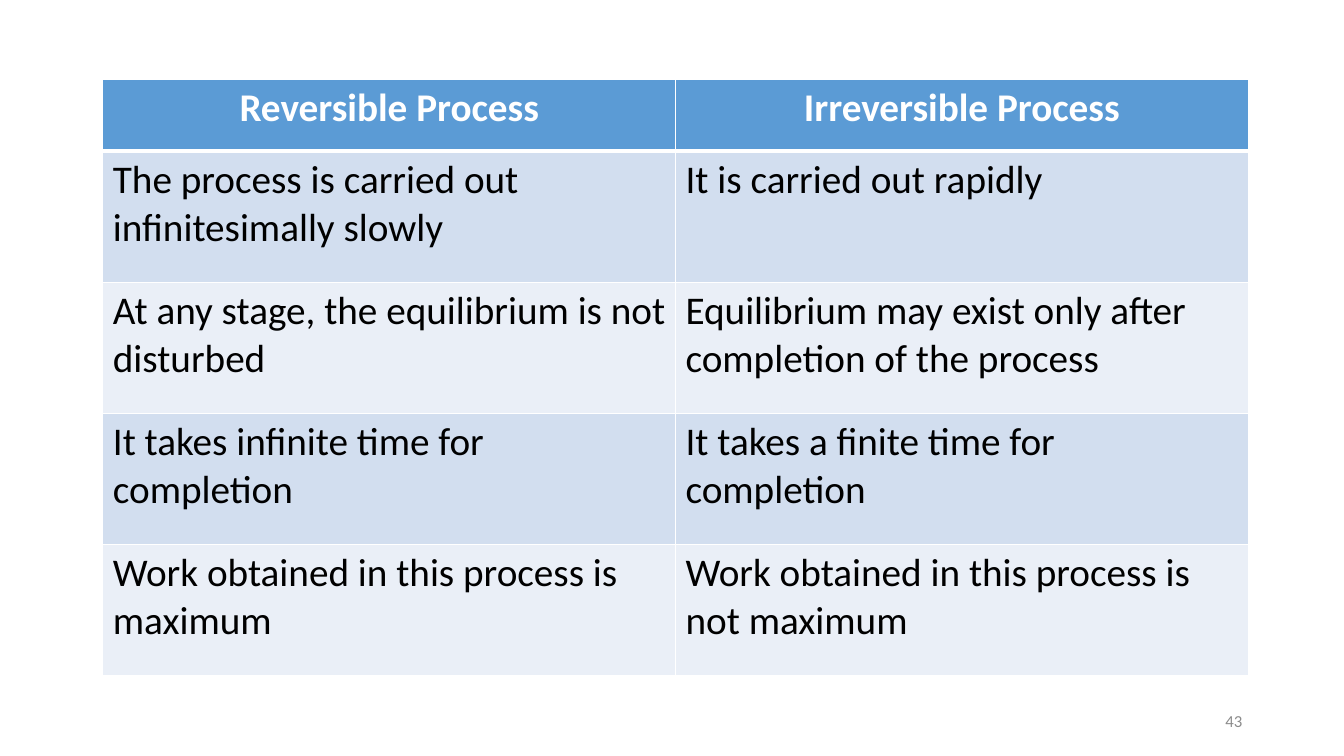
from lxml.etree import SubElement
from pptx import Presentation
from pptx.dml.color import RGBColor as RGB
from pptx.enum.text import MSO_ANCHOR as ANCHOR, PP_ALIGN as ALIGN
from pptx.oxml.ns import qn
from pptx.util import Inches, Pt

THEME = {
    "font": "Calibri", "table_size": 28, "number_size": 12,
    "header": "5B9BD5", "bands": ("D2DEEF", "EAEFF7"),
    "white": "FFFFFF", "ink": "000000", "number": "8C8C8C",
}
HEADER_HEIGHT, ROW_HEIGHT, COLUMN_WIDTH = 0.71, 1.3, 5.68

COMPARISON = [
    ("Reversible Process", "Irreversible Process"),
    ("The process is carried out infinitesimally slowly",
     "It is carried out rapidly"),
    ("At any stage, the equilibrium is not disturbed",
     "Equilibrium may exist only after completion of the process"),
    ("It takes infinite time for completion",
     "It takes a finite time for completion"),
    ("Work obtained in this process is maximum",
     "Work obtained in this process is not maximum"),
]


def write(frame, text, size, color, align, bold=False):
    frame.text = text
    paragraph = frame.paragraphs[0]
    paragraph.alignment = align
    font = paragraph.runs[0].font
    font.name, font.size, font.bold = THEME["font"], Pt(size), bold
    font.color.rgb = RGB.from_string(color)


def add_border(cell, side, width):
    line = SubElement(cell._tc.get_or_add_tcPr(), qn(f"a:ln{side}"), w=str(Pt(width)))
    fill = SubElement(line, qn("a:solidFill"))
    SubElement(fill, qn("a:srgbClr"), val=THEME["white"])


prs = Presentation()
prs.slide_width, prs.slide_height = Inches(13.33), Inches(7.5)
slide = prs.slides.add_slide(prs.slide_layouts[6])

# Comparison table
row_count, column_count = len(COMPARISON), len(COMPARISON[0])
comparison = slide.shapes.add_table(
    row_count, column_count, Inches(1.02), Inches(0.79),
    Inches(column_count * COLUMN_WIDTH),
    Inches(HEADER_HEIGHT + (row_count - 1) * ROW_HEIGHT)).table
for column in comparison.columns:
    column.width = Inches(COLUMN_WIDTH)

for r, statements in enumerate(COMPARISON):
    is_header = r == 0
    comparison.rows[r].height = Inches(HEADER_HEIGHT if is_header else ROW_HEIGHT)
    band = THEME["header"] if is_header else THEME["bands"][(r - 1) % 2]
    for c, statement in enumerate(statements):
        cell = comparison.cell(r, c)
        # A thick rule separates the header from the body
        for side, width in (("L", 1), ("R", 1), ("T", 3 if r == 1 else 1),
                            ("B", 3 if is_header else 1)):
            add_border(cell, side, width)
        cell.fill.solid()
        cell.fill.fore_color.rgb = RGB.from_string(band)
        write(cell.text_frame, statement, THEME["table_size"],
              THEME["white"] if is_header else THEME["ink"],
              ALIGN.CENTER if is_header else ALIGN.LEFT, is_header)

# Slide number
page_number = slide.shapes.add_textbox(
    Inches(9.42), Inches(6.95), Inches(3), Inches(0.4)).text_frame
page_number.word_wrap = True
page_number.vertical_anchor = ANCHOR.MIDDLE
write(page_number, "43", THEME["number_size"], THEME["number"], ALIGN.RIGHT)

prs.save("out.pptx")
